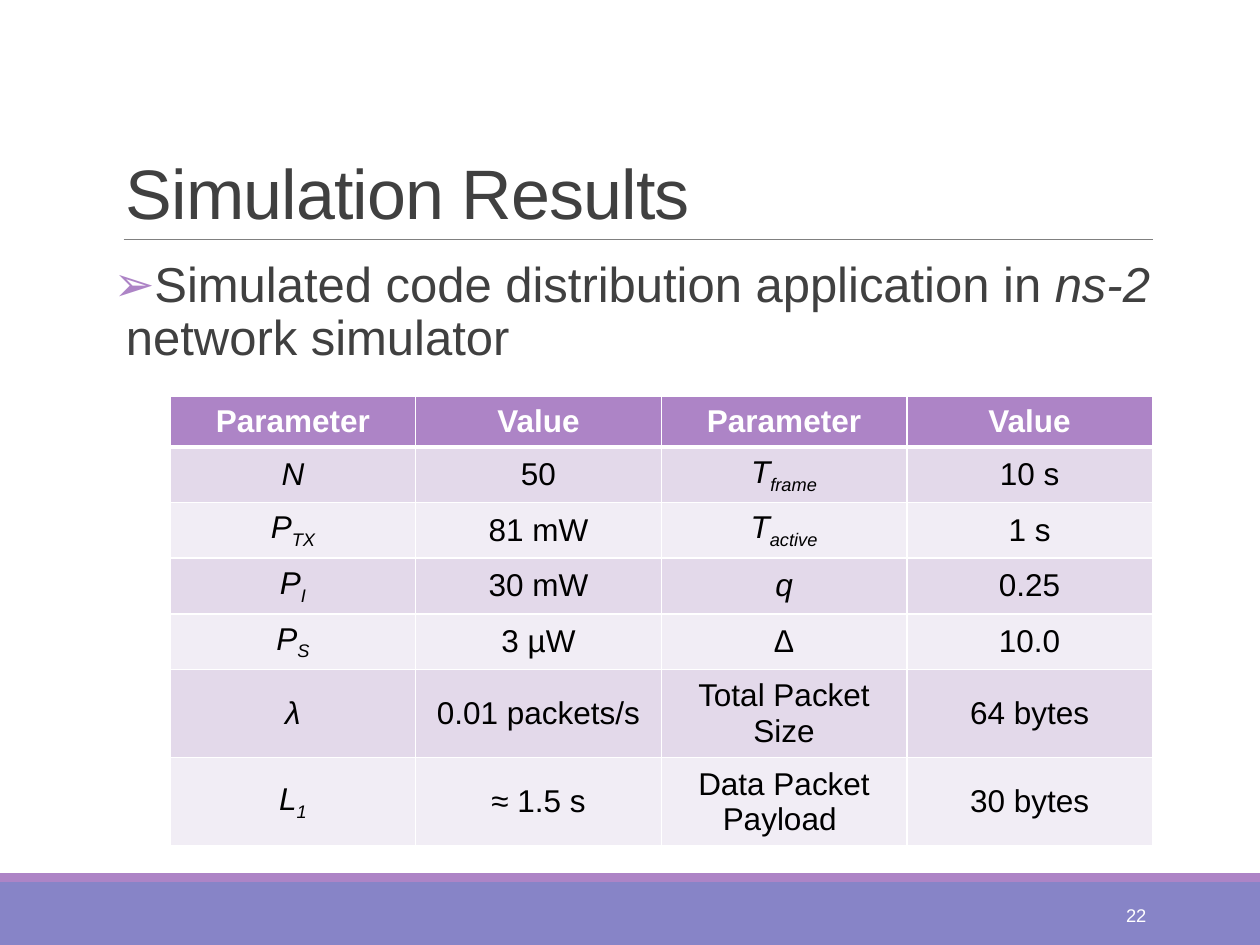
from dataclasses import dataclass

from lxml import etree
from pptx import Presentation
from pptx.dml.color import RGBColor
from pptx.enum.shapes import MSO_CONNECTOR, MSO_SHAPE
from pptx.enum.text import MSO_ANCHOR, PP_ALIGN
from pptx.oxml.ns import qn
from pptx.util import Cm, Pt

RECTANGLE = MSO_SHAPE.RECTANGLE
STRAIGHT = MSO_CONNECTOR.STRAIGHT
TOP, MIDDLE, BOTTOM = MSO_ANCHOR.TOP, MSO_ANCHOR.MIDDLE, MSO_ANCHOR.BOTTOM
LEFT, CENTER, RIGHT = PP_ALIGN.LEFT, PP_ALIGN.CENTER, PP_ALIGN.RIGHT

WHITE = RGBColor(0xFF, 0xFF, 0xFF)
BLACK = RGBColor(0x00, 0x00, 0x00)
DARK_GRAY = RGBColor(0x40, 0x40, 0x40)
RULE_GRAY = RGBColor(0x80, 0x80, 0x80)
INDIGO = RGBColor(0x87, 0x84, 0xC7)
PURPLE = RGBColor(0xAD, 0x84, 0xC6)
DARK_BAND = RGBColor(0xE3, 0xD9, 0xEA)
LIGHT_BAND = RGBColor(0xF1, 0xED, 0xF5)
FONT_NAME = "Arial"


@dataclass(frozen=True)
class Run:
    text: str
    italic: bool = False
    subscript: bool = False


@dataclass(frozen=True)
class Style:
    size: float
    color: RGBColor
    bold: bool = False
    spacing: float = 0


@dataclass(frozen=True)
class Box:
    left: float
    top: float
    width: float
    height: float

    def lengths(self) -> tuple:
        return Cm(self.left), Cm(self.top), Cm(self.width), Cm(self.height)


def symbol(name: str, index: str = "") -> list[Run]:
    base = [Run(name, italic=True)]
    return base + [Run(index, italic=True, subscript=True)] if index else base


def plain(text: str) -> list[Run]:
    return [Run(text)]


HEADER = [plain(text) for text in ("Parameter", "Value") * 2]
PARAMETERS = [
    [symbol("N"), plain("50"), symbol("T", "frame"), plain("10 s")],
    [symbol("P", "TX"), plain("81 mW"), symbol("T", "active"), plain("1 s")],
    [symbol("P", "I"), plain("30 mW"), symbol("q"), plain("0.25")],
    [symbol("P", "S"), plain("3 µW"), symbol("∆"), plain("10.0")],
    [symbol("λ"), plain("0.01 packets/s"), plain("Total Packet Size"), plain("64 bytes")],
    [symbol("L", "1"), plain("≈ 1.5 s"), plain("Data Packet Payload "), plain("30 bytes")],
]
ROW_HEIGHTS = [1.03] + [1.07] * 4 + [1.67] * 2
COLUMN_WIDTH = 4.95


def add_runs(paragraph, runs: list[Run], style: Style) -> None:
    for item in runs:
        run = paragraph.add_run()
        run.text = item.text
        font = run.font
        font.name = FONT_NAME
        font.size = Pt(style.size)
        font.bold = style.bold
        font.italic = item.italic
        font.color.rgb = style.color
        properties = run._r.get_or_add_rPr()
        if item.subscript:
            properties.set("baseline", "-25000")
        if style.spacing:
            properties.set("spc", str(int(style.spacing * 100)))


def add_text(slide, box: Box, runs: list[Run], style: Style, anchor, alignment, side_inset: float = 0.25):
    frame = slide.shapes.add_textbox(*box.lengths()).text_frame
    frame.word_wrap = True
    frame.vertical_anchor = anchor
    frame.margin_left = frame.margin_right = Cm(side_inset)
    paragraph = frame.paragraphs[0]
    paragraph.alignment = alignment
    add_runs(paragraph, runs, style)
    return paragraph


def add_bullet(paragraph, character: str, color: RGBColor, indent: float) -> None:
    properties = paragraph._p.get_or_add_pPr()
    properties.set("marL", str(Cm(indent)))
    properties.set("indent", str(-Cm(indent)))
    bullet_color = etree.SubElement(properties, qn("a:buClr"))
    etree.SubElement(bullet_color, qn("a:srgbClr"), val=str(color))
    etree.SubElement(properties, qn("a:buFont"), typeface=FONT_NAME)
    etree.SubElement(properties, qn("a:buChar"), char=character)


def add_band(slide, box: Box, color: RGBColor) -> None:
    shape = slide.shapes.add_shape(RECTANGLE, *box.lengths())
    shape.shadow.inherit = False
    shape.fill.solid()
    shape.fill.fore_color.rgb = color
    shape.line.fill.background()


def add_rule(slide, left: float, right: float, top: float) -> None:
    connector = slide.shapes.add_connector(STRAIGHT, Cm(left), Cm(top), Cm(right), Cm(top))
    connector.line.color.rgb = RULE_GRAY
    connector.line.width = Pt(0.5)
    etree.SubElement(connector._element.spPr, qn("a:effectLst"))


def set_borders(cell, widths: dict[str, float]) -> None:
    properties = cell._tc.get_or_add_tcPr()
    for side, width in widths.items():
        line = etree.SubElement(properties, qn(f"a:ln{side}"), w=str(Pt(width)))
        fill = etree.SubElement(line, qn("a:solidFill"))
        etree.SubElement(fill, qn("a:srgbClr"), val=str(WHITE))


def add_parameter_table(slide, left: float, top: float) -> None:
    rows = [HEADER] + PARAMETERS
    box = Box(left, top, COLUMN_WIDTH * len(HEADER), sum(ROW_HEIGHTS))
    table = slide.shapes.add_table(len(rows), len(HEADER), *box.lengths()).table
    table.horz_banding = False
    for column in table.columns:
        column.width = Cm(COLUMN_WIDTH)
    for row_index, (contents, height) in enumerate(zip(rows, ROW_HEIGHTS)):
        table.rows[row_index].height = Cm(height)
        is_header = row_index == 0
        style = Style(18, WHITE if is_header else BLACK, bold=is_header)
        band = DARK_BAND if row_index % 2 else LIGHT_BAND
        borders = {"L": 1, "R": 1, "T": 3 if row_index == 1 else 1, "B": 3 if is_header else 1}
        for column_index, runs in enumerate(contents):
            cell = table.cell(row_index, column_index)
            set_borders(cell, borders)
            cell.fill.solid()
            cell.fill.fore_color.rgb = PURPLE if is_header else band
            cell.vertical_anchor = MIDDLE
            paragraph = cell.text_frame.paragraphs[0]
            paragraph.alignment = CENTER
            add_runs(paragraph, runs, style)


def main() -> None:
    presentation = Presentation()
    presentation.slide_width, presentation.slide_height = Cm(25.4), Cm(19.05)
    slide = presentation.slides.add_slide(presentation.slide_layouts[6])

    add_band(slide, Box(0, 17.78, 25.4, 1.27), INDIGO)
    add_band(slide, Box(0, 17.6, 25.4, 0.18), PURPLE)
    add_rule(slide, 2.49, 23.24, 4.83)

    title = add_text(slide, Box(2.29, 0.79, 20.95, 4.04), plain("Simulation Results"),
                     Style(40, DARK_GRAY, spacing=-0.5), BOTTOM, LEFT)
    title.line_spacing = 0.85

    summary = [Run("Simulated code distribution application in "),
               Run("ns-2 ", italic=True), Run("network simulator")]
    body = add_text(slide, Box(2.29, 5.13, 20.95, 11.18), summary,
                    Style(28, DARK_GRAY), TOP, LEFT, side_inset=0)
    body.line_spacing = 0.9
    body.space_before, body.space_after = Pt(12), Pt(2)
    add_bullet(body, "➢", PURPLE, 0.25)

    add_text(slide, Box(20.62, 17.93, 2.74, 1.02), plain("22"), Style(10.5, WHITE), MIDDLE, RIGHT)
    add_parameter_table(slide, 3.43, 7.98)
    presentation.save("out.pptx")


if __name__ == "__main__":
    main()
